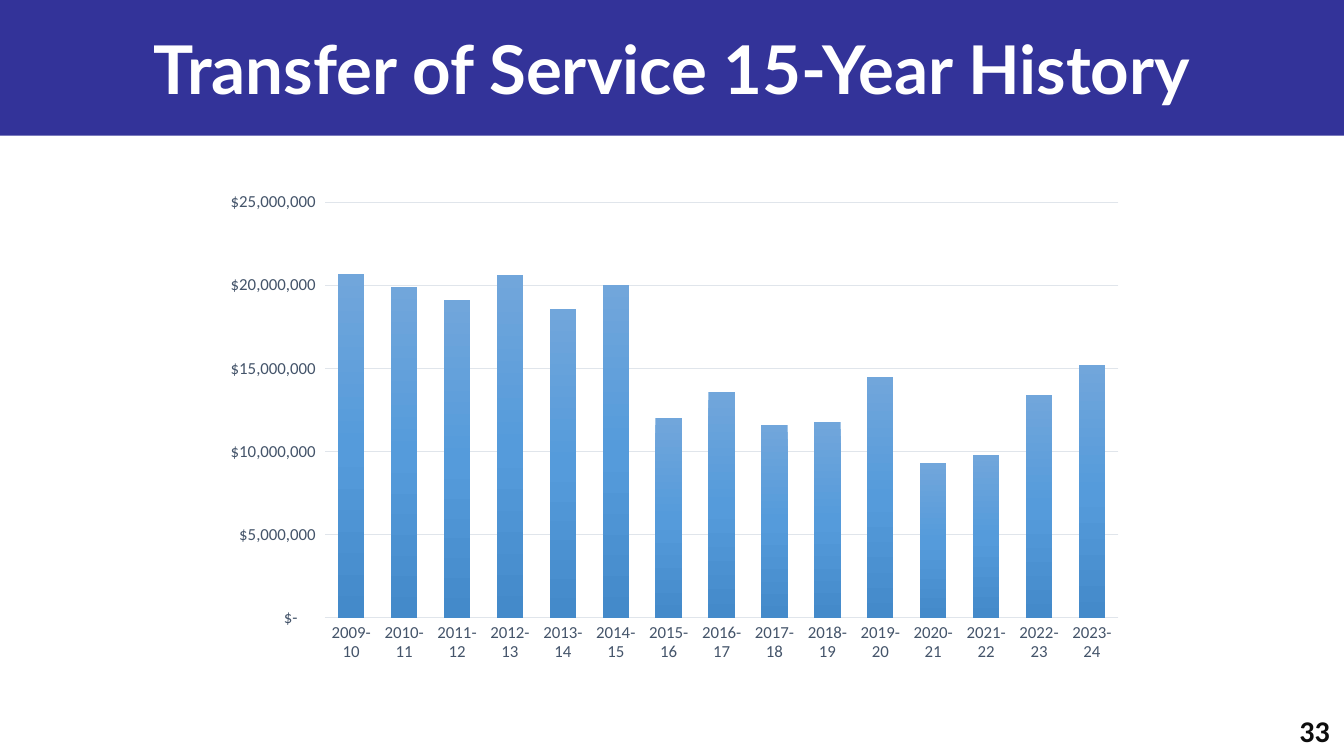
import lxml.etree
import pptx
import pptx.chart.data
import pptx.dml.color
import pptx.enum.chart
import pptx.enum.shapes
import pptx.enum.text
import pptx.oxml
import pptx.oxml.ns
import pptx.util

Inches = pptx.util.Inches
Pt = pptx.util.Pt

AMOUNTS = [
    20700000, 19900000, 19100000, 20600000, 18600000,
    20000000, 12000000, 13600000, 11600000, 11800000,
    14500000, 9300000, 9800000, 13400000, 15200000,
]
SCHOOL_YEARS = [f"{year}-{(year + 1) % 100}" for year in range(2009, 2024)]
DOLLAR_FORMAT = r'_("$"* #,##0_);_("$"* \(#,##0\);_("$"* "-"??_);_(@_)'
BAR_STOPS = [(0, "71A6DB"), (50, "559BDB"), (100, "448ACA")]


def color(value):
    """Return the colour for a hex string."""
    return pptx.dml.color.RGBColor.from_string(value)


def set_font(font, name, size, value, bold=False):
    """Set the face, size, colour and weight of a font."""
    font.name = name
    font.size = Pt(size)
    font.bold = bold
    font.color.rgb = color(value)


def set_line(line, value, width):
    """Give a line a solid colour and a width in points."""
    line.color.rgb = color(value)
    line.width = Pt(width)


def fill_with_gradient(series, stops, angle):
    """Fill a series with a linear gradient of any number of stops."""
    series.format.fill.gradient()
    gradient = series._element.spPr.find(pptx.oxml.ns.qn("a:gradFill"))
    stop_list = gradient.find(pptx.oxml.ns.qn("a:gsLst"))
    for stop in list(stop_list):
        stop_list.remove(stop)
    for position, value in stops:
        stop = lxml.etree.SubElement(
            stop_list, pptx.oxml.ns.qn("a:gs"), pos=str(position * 1000))
        lxml.etree.SubElement(stop, pptx.oxml.ns.qn("a:srgbClr"), val=value)
    gradient.find(pptx.oxml.ns.qn("a:lin")).set("ang", str(angle * 60000))


def add_title_band(slide, left, top, width, height):
    """Add the coloured band and the title centred on it."""
    bleed = 0.01
    band = slide.shapes.add_shape(
        pptx.enum.shapes.MSO_SHAPE.RECTANGLE, Inches(left - bleed),
        Inches(top), Inches(width + bleed), Inches(height))
    band.shadow.inherit = False
    band.fill.solid()
    band.fill.fore_color.rgb = color("333399")
    band.line.fill.background()
    frame = slide.shapes.add_textbox(
        Inches(left), Inches(top), Inches(width), Inches(height)).text_frame
    frame.word_wrap = True
    frame.vertical_anchor = pptx.enum.text.MSO_ANCHOR.MIDDLE
    paragraph = frame.paragraphs[0]
    paragraph.text = "Transfer of Service 15-Year History"
    paragraph.alignment = pptx.enum.text.PP_ALIGN.CENTER
    paragraph.space_after = Pt(30)
    set_font(paragraph.font, "Lato", 36, "FFFFFF", bold=True)


def add_history_chart(slide, left, top, width, height):
    """Add the column chart of yearly transfer amounts."""
    data = pptx.chart.data.CategoryChartData()
    data.categories = SCHOOL_YEARS
    data.add_series("Series 1", AMOUNTS)
    chart = slide.shapes.add_chart(
        pptx.enum.chart.XL_CHART_TYPE.COLUMN_CLUSTERED,
        Inches(left), Inches(top), Inches(width), Inches(height), data).chart
    chart.has_legend = False
    chart.has_title = False
    set_font(chart.font, "Calibri", 10, "000000")

    plot = chart.plots[0]
    plot.vary_by_categories = False
    plot.gap_width = 100
    plot.overlap = -24
    fill_with_gradient(plot.series[0], BAR_STOPS, 90)

    for axis in (chart.category_axis, chart.value_axis):
        axis.major_tick_mark = pptx.enum.chart.XL_TICK_MARK.NONE
        axis.minor_tick_mark = pptx.enum.chart.XL_TICK_MARK.NONE
        set_font(axis.tick_labels.font, "Calibri", 9, "44546A")
    set_line(chart.category_axis.format.line, "E0E5EB", 0.75)

    amounts = chart.value_axis
    amounts.minimum_scale = 0
    amounts.maximum_scale = 25000000
    amounts.major_unit = 5000000
    amounts.format.line.fill.background()
    set_line(amounts.major_gridlines.format.line, "E0E5EB", 0.75)
    amounts.tick_labels.number_format = DOLLAR_FORMAT
    amounts.tick_labels.number_format_is_linked = False


def add_page_number(slide, left, top, width, height):
    """Add the page number in the bottom corner."""
    frame = slide.shapes.add_textbox(
        Inches(left), Inches(top), Inches(width), Inches(height)).text_frame
    frame.word_wrap = True
    frame.auto_size = pptx.enum.text.MSO_AUTO_SIZE.SHAPE_TO_FIT_TEXT
    paragraph = frame.paragraphs[0]
    paragraph.text = "33"
    set_font(paragraph.font, "Calibri", 16.1, "0D0D0D", bold=True)


def main():
    """Build the widescreen slide and save the presentation."""
    presentation = pptx.Presentation()
    presentation.slide_width = Inches(10)
    presentation.slide_height = Inches(10 * 9 / 16)
    slide = presentation.slides.add_slide(presentation.slide_layouts[6])
    add_title_band(slide, 0, 0, 10, 1.01)
    add_history_chart(slide, 1.55, 1.36, 6.91, 3.64)
    add_page_number(slide, 9.57, 5.25, 0.43, 0.37)
    presentation.save("out.pptx")


if __name__ == "__main__":
    main()
